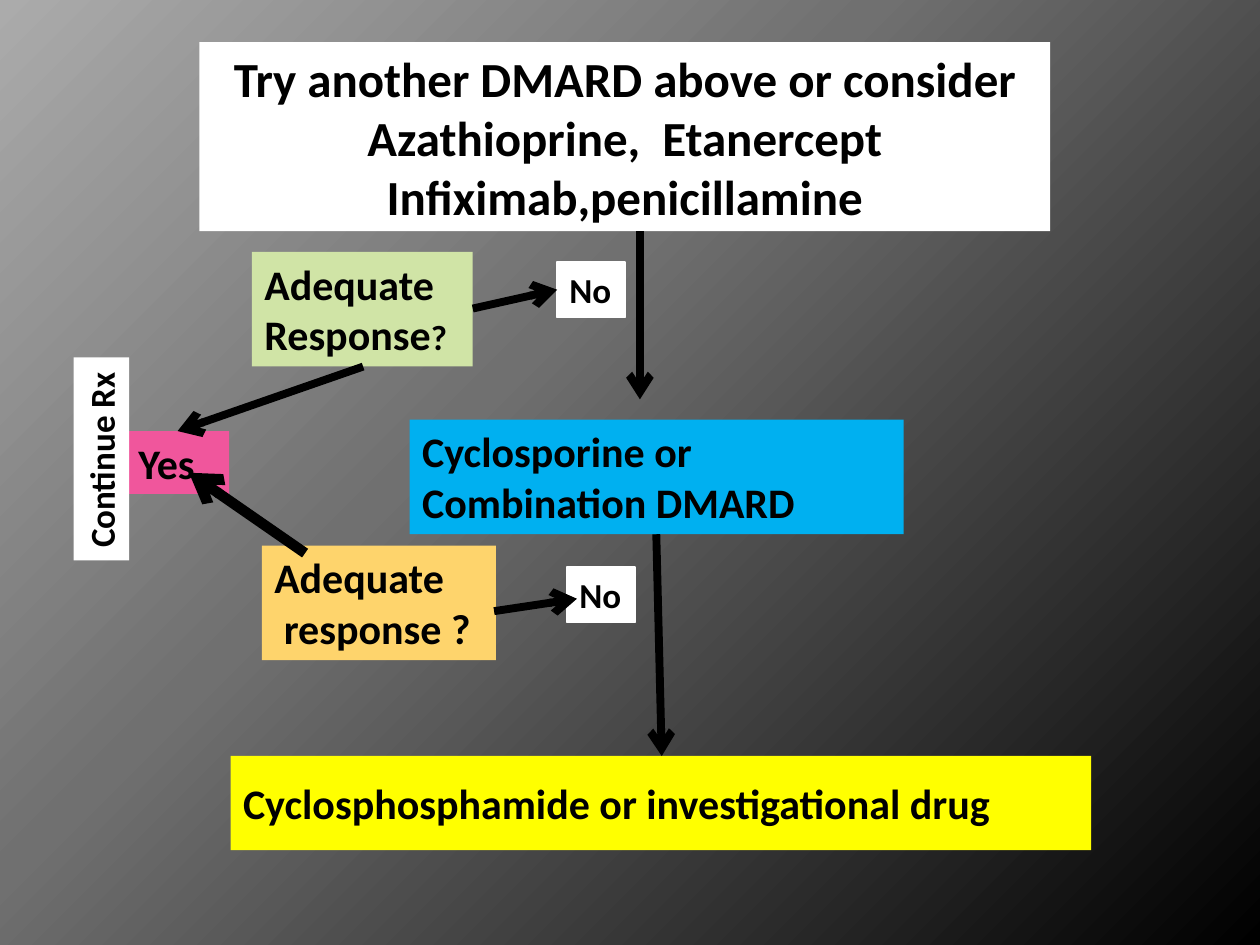
from dataclasses import dataclass

from lxml import etree
from pptx import Presentation
from pptx.dml.color import RGBColor
from pptx.enum.shapes import MSO_CONNECTOR, MSO_SHAPE
from pptx.enum.text import MSO_ANCHOR, MSO_AUTO_SIZE, PP_ALIGN
from pptx.oxml import parse_xml
from pptx.oxml.ns import nsdecls, qn
from pptx.util import Cm, Pt

RECTANGLE = MSO_SHAPE.RECTANGLE
STRAIGHT = MSO_CONNECTOR.STRAIGHT
TOP, MIDDLE = MSO_ANCHOR.TOP, MSO_ANCHOR.MIDDLE
LEFT, CENTER = PP_ALIGN.LEFT, PP_ALIGN.CENTER
FIT_SHAPE = MSO_AUTO_SIZE.SHAPE_TO_FIT_TEXT


@dataclass(frozen=True)
class Theme:
    font: str = "Calibri"
    ink: str = "000000"
    white: str = "FFFFFF"
    yellow: str = "FFFF00"
    amber: str = "FED46C"
    green: str = "D0E4A6"
    pink: str = "F0569C"
    blue: str = "00B0F0"
    backdrop: tuple = ((0, "ABABAB"), (40, "707070"), (100, "000000"))
    heading: int = 28
    step: int = 24
    label: int = 20
    arrow: float = 4.5
    thick_arrow: float = 6


THEME = Theme()

# Left, top, width, height in cm; fill; lines of (text, size) spans
STEPS = [
    ((4.65, 15.24, 17.35, 1.9), THEME.yellow, MIDDLE, LEFT,
     [[("Cyclosphosphamide or investigational drug", THEME.step)]]),
    ((5.28, 11, 4.72, 2.31), THEME.amber, TOP, LEFT,
     [[("Adequate", THEME.step)], [(" response ?", THEME.step)]]),
    ((5.08, 5.08, 4.45, 2.31), THEME.green, TOP, LEFT,
     [[("Adequate", THEME.step)],
      [("Response", THEME.step), ("?", THEME.label)]]),
    ((2.54, 8.69, 2.08, 1.27), THEME.pink, TOP, LEFT,
     [[("Yes", THEME.step)]]),
    ((4.02, 0.85, 17.15, 3.81), THEME.white, MIDDLE, CENTER,
     [[("Try another DMARD above or consider", THEME.heading)],
      [("Azathioprine,  Etanercept", THEME.heading)],
      [("Infiximab,penicillamine", THEME.heading)]]),
    ((8.26, 8.46, 9.96, 2.31), THEME.blue, TOP, LEFT,
     [[("Cyclosporine or", THEME.step)],
      [("Combination DMARD", THEME.step)]]),
]

# Text, place in cm, rotation, outlined
LABELS = [
    ("No", (11.23, 5.28, 1.37, 1.12), 0, True),
    ("No", (11.43, 11.43, 1.37, 1.12), 0, True),
    ("Continue Rx", (0, 8.69, 4.09, 1.12), 270, False),
]

# Start and end in cm, width in points
ARROWS = [
    ((12.9, 4.66), (12.9, 8.05), THEME.arrow),
    ((7.32, 7.39), (3.58, 8.69), THEME.arrow),
    ((9.53, 6.22), (11.23, 5.84), THEME.arrow),
    ((13.23, 10.77), (13.34, 15.24), THEME.arrow),
    ((9.96, 12.32), (11.63, 12.07), THEME.arrow),
    ((6.15, 11.15), (3.81, 9.53), THEME.thick_arrow),
]


def color(code):
    return RGBColor.from_string(code)


def paint_background(slide):
    """Radial gradient centred beyond the top left corner."""
    stops = "".join(
        f'<a:gs pos="{percent * 1000}"><a:srgbClr val="{code}"/></a:gs>'
        for percent, code in THEME.backdrop)
    background = parse_xml(
        f'<p:bg {nsdecls("p", "a")}><p:bgPr><a:gradFill rotWithShape="1">'
        f'<a:gsLst>{stops}</a:gsLst><a:path path="circle">'
        '<a:fillToRect l="-24000" t="-20000" r="124000" b="120000"/>'
        '</a:path></a:gradFill><a:effectLst/></p:bgPr></p:bg>')
    slide.element.cSld.insert(0, background)


def add_box(slide, place, fill, anchor, align, lines, wrap=True):
    box = slide.shapes.add_shape(RECTANGLE, *map(Cm, place))
    box.shadow.inherit = False
    box.fill.solid()
    box.fill.fore_color.rgb = color(fill)
    box.line.fill.background()
    frame = box.text_frame
    frame.word_wrap = wrap
    frame.vertical_anchor = anchor
    if anchor == TOP:
        frame.auto_size = FIT_SHAPE
    for number, spans in enumerate(lines):
        para = frame.add_paragraph() if number else frame.paragraphs[0]
        para.alignment = align
        para.font.name = THEME.font
        para.font.bold = True
        para.font.color.rgb = color(THEME.ink)
        for text, size in spans:
            span = para.add_run()
            span.text = text
            span.font.size = Pt(size)
    return box


def add_label(slide, text, place, rotation, outlined):
    box = add_box(slide, place, THEME.white, TOP, LEFT,
                  [[(text, THEME.label)]], wrap=False)
    box.rotation = rotation
    if outlined:
        box.line.color.rgb = color(THEME.white)
        box.line.width = Pt(0.75)


def add_arrow(slide, start, end, width):
    arrow = slide.shapes.add_connector(STRAIGHT, *map(Cm, start + end))
    arrow.line.color.rgb = color(THEME.ink)
    arrow.line.width = Pt(width)
    etree.SubElement(arrow.line._get_or_add_ln(), qn("a:tailEnd"), type="arrow")
    etree.SubElement(arrow.element.spPr, qn("a:effectLst"))


def main():
    deck = Presentation()
    deck.slide_width, deck.slide_height = Cm(25.4), Cm(19.05)
    slide = deck.slides.add_slide(deck.slide_layouts.get_by_name("Blank"))
    paint_background(slide)
    for step in STEPS:
        add_box(slide, *step)
    for label in LABELS:
        add_label(slide, *label)
    for arrow in ARROWS:
        add_arrow(slide, *arrow)
    deck.save("out.pptx")


if __name__ == "__main__":
    main()
